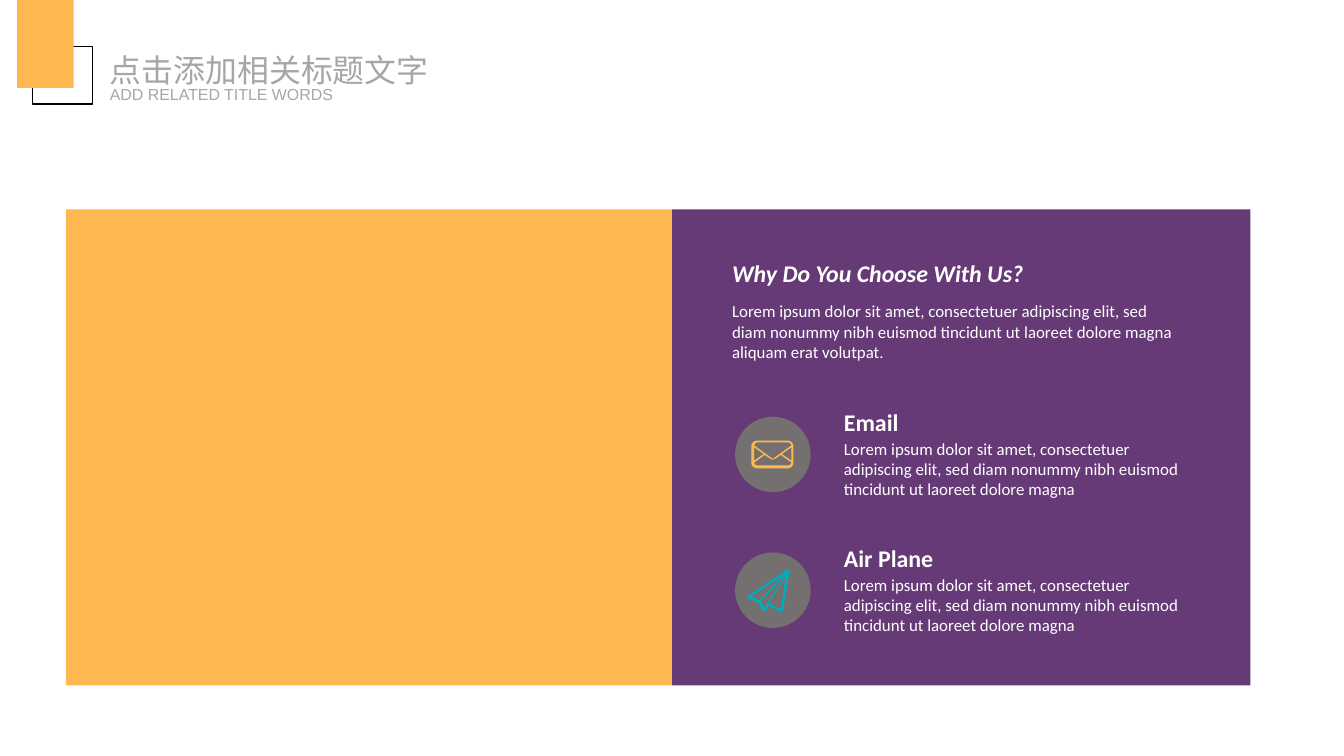
from math import cos, pi, sin

from lxml import etree
from pptx import Presentation
from pptx.dml.color import RGBColor
from pptx.enum.shapes import MSO_SHAPE
from pptx.enum.text import MSO_AUTO_SIZE
from pptx.oxml.ns import qn
from pptx.util import Inches, Pt

RECTANGLE = MSO_SHAPE.RECTANGLE
OVAL = MSO_SHAPE.OVAL
GROW_TO_TEXT = MSO_AUTO_SIZE.SHAPE_TO_FIT_TEXT

ORANGE = RGBColor(0xFF, 0xB8, 0x50)
PURPLE = RGBColor(0x66, 0x3A, 0x77)
GRAY = RGBColor(0x75, 0x70, 0x70)
TITLE_GRAY = RGBColor(0xA6, 0xA6, 0xA6)
TEAL = RGBColor(0x01, 0xAC, 0xBE)
WHITE = RGBColor(0xFF, 0xFF, 0xFF)
BLACK = RGBColor(0x00, 0x00, 0x00)

HEADING_SIZE = 18
BODY_SIZE = 12.7
BODY = (
    "Lorem ipsum dolor sit amet, consectetuer adipiscing elit, "
    "sed diam nonummy nibh euismod tincidunt ut laoreet dolore magna"
)
ITEM_TOP = 4.22
ITEM_PITCH = 1.42


def rounded_outline(left, top, right, bottom, radius, steps=6):
    centers = [
        (right - radius, bottom - radius),
        (left + radius, bottom - radius),
        (left + radius, top + radius),
        (right - radius, top + radius),
    ]
    return [
        (x + radius * cos(angle), y + radius * sin(angle))
        for corner, (x, y) in enumerate(centers)
        for angle in [(corner + step / steps) * pi / 2 for step in range(steps + 1)]
    ]


ENVELOPE = [
    rounded_outline(7.86, 4.61, 8.3, 4.9, 0.06),
    [(7.89, 4.66), (7.9, 4.64), (7.92, 4.63), (8.25, 4.63), (8.27, 4.64),
     (8.28, 4.66), (8.1, 4.79), (8.08, 4.8), (8.07, 4.79)],
    [(8.28, 4.82), (8.18, 4.75), (8.28, 4.68)],
    [(8.28, 4.84), (8.27, 4.86), (8.25, 4.87), (7.92, 4.87), (7.9, 4.86),
     (7.89, 4.84), (8, 4.76), (8.06, 4.8), (8.08, 4.81), (8.11, 4.8), (8.17, 4.76)],
    [(7.89, 4.68), (7.99, 4.75), (7.89, 4.82)],
]
PAPER_PLANE = [
    [(8.25, 5.96), (8.24, 5.96), (7.82, 6.24), (7.82, 6.26), (7.93, 6.3),
     (7.98, 6.39), (8, 6.4), (8.01, 6.39), (8.04, 6.34), (8.17, 6.4),
     (8.18, 6.4), (8.19, 6.39), (8.26, 5.97)],
    [(8.17, 6.37), (8.05, 6.32), (8.04, 6.32), (8.22, 6.03)],
    [(7.96, 6.29), (8.22, 6.01), (8, 6.36)],
    [(7.86, 6.24), (8.18, 6.03), (7.95, 6.28), (7.94, 6.28)],
]
ITEMS = [("Email", 1.35, ENVELOPE, ORANGE), ("Air Plane", 1.84, PAPER_PLANE, TEAL)]


class SlideBuilder:
    font = "Calibri"
    color = WHITE

    def __init__(self, slide):
        self.slide = slide

    def paint(self, shape, fill, line):
        shape.shadow.inherit = False
        if fill is None:
            shape.fill.background()
        else:
            shape.fill.solid()
            shape.fill.fore_color.rgb = fill
        if line is None:
            shape.line.fill.background()
        else:
            shape.line.color.rgb = line
            shape.line.width = Pt(1)

    def shape(self, kind, left, top, width, height, fill=None, line=None):
        shape = self.slide.shapes.add_shape(
            kind, Inches(left), Inches(top), Inches(width), Inches(height)
        )
        self.paint(shape, fill, line)

    def icon(self, outlines, fill):
        contours = [[(Inches(x), Inches(y)) for x, y in outline] for outline in outlines]
        builder = self.slide.shapes.build_freeform(*contours[0][0])
        builder.add_line_segments(contours[0][1:], close=True)
        for contour in contours[1:]:
            builder.move_to(*contour[0])
            builder.add_line_segments(contour[1:], close=True)
        self.paint(builder.convert_to_shape(), fill, None)

    def text(self, text, left, top, width, height, size, font=None, color=None,
             bold=False, italic=False, wrap=True, inset=True):
        box = self.slide.shapes.add_textbox(
            Inches(left), Inches(top), Inches(width), Inches(height)
        )
        frame = box.text_frame
        frame.word_wrap = wrap
        frame.auto_size = GROW_TO_TEXT
        if not inset:
            frame.margin_left = frame.margin_right = 0
            frame.margin_top = frame.margin_bottom = 0
        run = frame.paragraphs[0].add_run()
        run.text = text
        run.font.size = Pt(size)
        run.font.bold = bold
        run.font.italic = italic
        run.font.color.rgb = color or self.color
        run.font.name = font or self.font
        east_asian = etree.SubElement(run._r.get_or_add_rPr(), qn("a:ea"))
        east_asian.set("typeface", font or self.font)


def main():
    presentation = Presentation()
    presentation.slide_width = Inches(14.06)
    presentation.slide_height = Inches(7.91)
    slide = presentation.slides.add_slide(presentation.slide_layouts[6])
    builder = SlideBuilder(slide)

    builder.shape(RECTANGLE, 7.03, 2.19, 6.05, 4.98, fill=PURPLE)
    builder.shape(RECTANGLE, 0.69, 2.19, 6.34, 4.98, fill=ORANGE)
    builder.shape(RECTANGLE, 0.34, 0.49, 0.63, 0.6, line=BLACK)
    builder.shape(RECTANGLE, 0.18, 0, 0.59, 0.92, fill=ORANGE)

    builder.text("点击添加相关标题文字", 1.15, 0.53, 3.37, 0.4, 24,
                 font="Noto Sans CJK SC", color=TITLE_GRAY, wrap=False, inset=False)
    builder.text("ADD RELATED TITLE WORDS", 1.15, 0.89, 2.36, 0.2, 12,
                 font="Arial", color=TITLE_GRAY, wrap=False, inset=False)

    builder.text("Why Do You Choose With Us?", 7.56, 2.66, 3.29, 0.4, HEADING_SIZE,
                 bold=True, italic=True, wrap=False)
    builder.text(BODY + " aliquam erat volutpat.", 7.56, 3.1, 4.87, 0.74, BODY_SIZE)

    for index, (heading, width, outlines, color) in enumerate(ITEMS):
        top = ITEM_TOP + index * ITEM_PITCH
        builder.shape(OVAL, 7.69, top + 0.14, 0.79, 0.79, fill=GRAY)
        builder.icon(outlines, color)
        builder.text(heading, 8.73, top, width, 0.4, HEADING_SIZE, bold=True)
        builder.text(BODY, 8.73, top + 0.32, 3.7, 0.74, BODY_SIZE)

    presentation.save("out.pptx")


if __name__ == "__main__":
    main()
